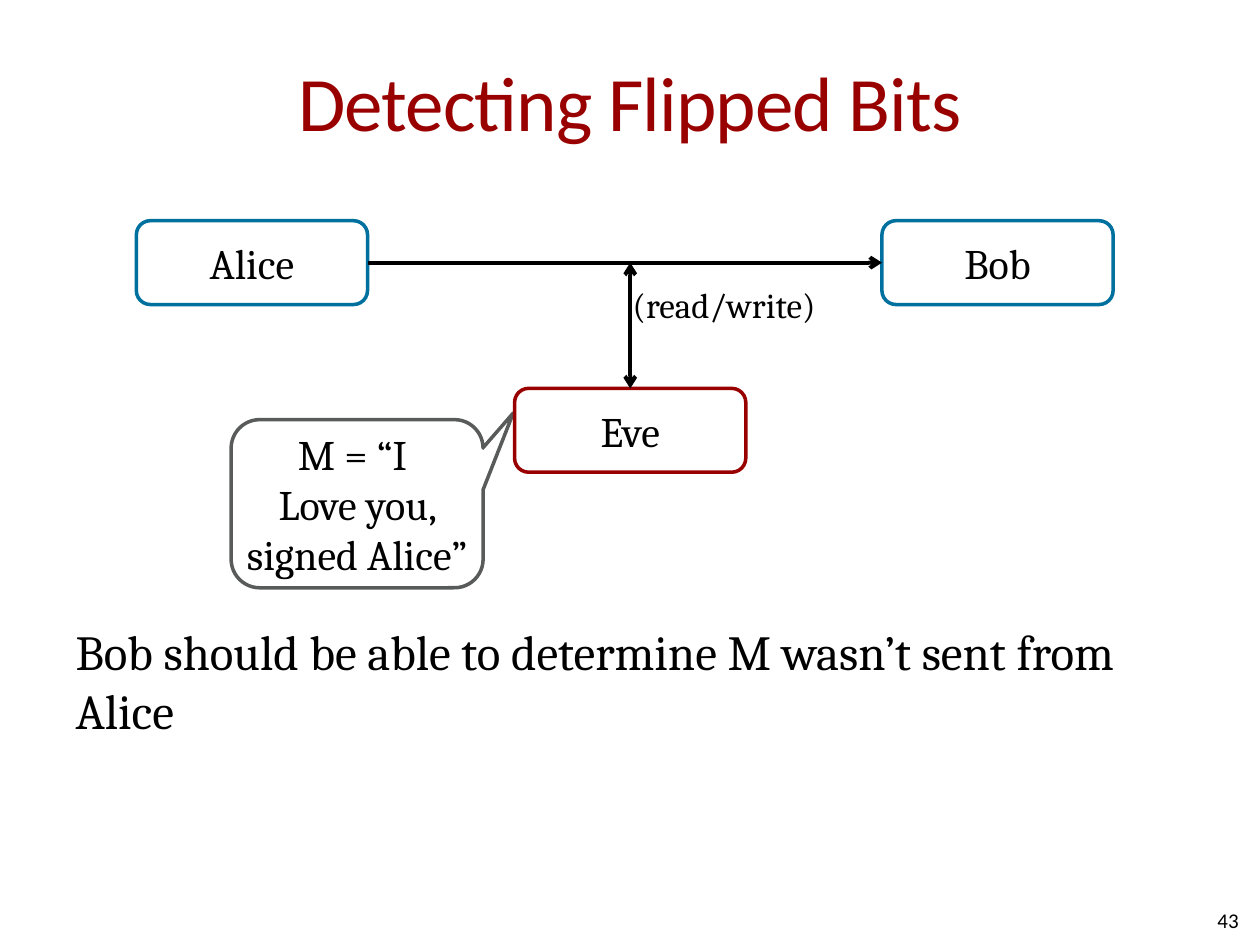
from dataclasses import dataclass

from lxml import etree
from pptx import Presentation
from pptx.dml.color import RGBColor
from pptx.enum.shapes import MSO_CONNECTOR, MSO_SHAPE
from pptx.enum.text import MSO_ANCHOR, MSO_AUTO_SIZE, PP_ALIGN
from pptx.oxml.ns import qn
from pptx.util import Cm, Pt

STRAIGHT = MSO_CONNECTOR.STRAIGHT
ROUNDED, CALLOUT = MSO_SHAPE.ROUNDED_RECTANGLE, MSO_SHAPE.ROUNDED_RECTANGULAR_CALLOUT
TOP, MIDDLE = MSO_ANCHOR.TOP, MSO_ANCHOR.MIDDLE
LEFT, CENTER, RIGHT = PP_ALIGN.LEFT, PP_ALIGN.CENTER, PP_ALIGN.RIGHT
SIDE_TOP, SIDE_LEFT, SIDE_RIGHT = 0, 1, 3


@dataclass(frozen=True)
class Theme:
    heading: str = "Calibri"
    text: str = "Cambria"
    black: RGBColor = RGBColor(0, 0, 0)
    white: RGBColor = RGBColor(255, 255, 255)
    red: RGBColor = RGBColor(0x99, 0, 0)
    blue: RGBColor = RGBColor(0, 0x70, 0x9E)
    gray: RGBColor = RGBColor(0x59, 0x5A, 0x5A)
    title_size: int = 44
    body_size: int = 28
    node_size: int = 24
    label_size: int = 20
    number_size: int = 12
    outline: float = 2
    arrow: float = 2.25


THEME = Theme()


def place(sp, box):
    sp.left, sp.top, sp.width, sp.height = (Cm(v) for v in box)


def set_margins(tf, x, y):
    tf.margin_left = tf.margin_right = Cm(x)
    tf.margin_top = tf.margin_bottom = Cm(y)


def add_run(p, text, size, font=THEME.text, color=THEME.black):
    r = p.add_run()
    r.text = text
    r.font.name, r.font.size = font, Pt(size)
    r.font.color.rgb = color
    return r


def write_lines(tf, lines, size, align, font=THEME.text):
    p = tf.paragraphs[0]
    p.alignment = align
    for i, line in enumerate(lines):
        if i:
            p.add_line_break()
        add_run(p, line, size, font)


def add_node(s, box, lines, color, kind=ROUNDED):
    sp = s.shapes.add_shape(kind, *(Cm(v) for v in box))
    sp.shadow.inherit = False
    sp.fill.solid()
    sp.fill.fore_color.rgb = THEME.white
    sp.line.color.rgb, sp.line.width = color, Pt(THEME.outline)
    tf = sp.text_frame
    set_margins(tf, 0, 0)
    tf.word_wrap, tf.vertical_anchor = True, MIDDLE
    write_lines(tf, lines, THEME.node_size, CENTER)
    return sp


def add_arrow(s, start, end, ends):
    cx = s.shapes.add_connector(STRAIGHT, *(Cm(v) for v in (*start, *end)))
    cx.line.color.rgb, cx.line.width = THEME.black, Pt(THEME.arrow)
    ln = cx.line._get_or_add_ln()
    for end_tag in ends:
        etree.SubElement(ln, qn(end_tag)).set("type", "arrow")
    etree.SubElement(cx._element.spPr, qn("a:effectLst"))
    return cx


def add_label(s, box, text, size, align=LEFT, font=THEME.text, anchor=TOP, wrap=True):
    tf = s.shapes.add_textbox(*(Cm(v) for v in box)).text_frame
    set_margins(tf, 0, 0)
    tf.word_wrap, tf.vertical_anchor = wrap, anchor
    if not wrap:
        tf.auto_size = MSO_AUTO_SIZE.SHAPE_TO_FIT_TEXT
    write_lines(tf, [text], size, align, font)


def fill_title(s, box, text):
    sp = s.shapes.title
    place(sp, box)
    tf = sp.text_frame
    set_margins(tf, 0, 0.13)
    tf.vertical_anchor = MIDDLE
    p = tf.paragraphs[0]
    p.alignment = CENTER
    r = add_run(p, text, THEME.title_size, THEME.heading, THEME.red)
    r.font._element.set("spc", "-50")


def fill_body(s, box, text):
    sp = s.placeholders[1]
    place(sp, box)
    p = sp.text_frame.paragraphs[0]
    pPr = p._p.get_or_add_pPr()
    pPr.set("marL", "0")
    pPr.set("indent", "0")
    etree.SubElement(pPr, qn("a:buNone"))
    add_run(p, text, THEME.body_size)


def add_channel(s, box):
    """Alice sends to Bob while Eve, below the line, reads and writes."""
    x, y, w, h = box
    node_w, node_h = 4.66, 1.69
    mid_x, mid_y = x + w / 2 + 0.11, y + node_h / 2
    eve_y = y + h - node_h - 2.33
    alice = add_node(s, (x, y, node_w, node_h), ["Alice"], THEME.blue)
    bob = add_node(s, (x + w - node_w, y, node_w, node_h), ["Bob"], THEME.blue)
    message = add_arrow(s, (x + node_w, mid_y), (x + w - node_w, mid_y), ["a:tailEnd"])
    message.begin_connect(alice, SIDE_RIGHT)
    message.end_connect(bob, SIDE_LEFT)

    callout = add_node(s, (x + 1.91, y + h - 3.39, 5.08, 3.39),
                       ["M = “I ", "Love you, signed Alice”"], THEME.gray, CALLOUT)
    for i, value in enumerate((0.62, -0.54, 0.17)):
        callout.adjustments[i] = value

    eve = add_node(s, (mid_x - node_w / 2, eve_y, node_w, node_h), ["Eve"], THEME.red)
    tap = add_arrow(s, (mid_x, eve_y), (mid_x, mid_y), ["a:headEnd", "a:tailEnd"])
    tap.begin_connect(eve, SIDE_TOP)
    add_label(s, (mid_x + 0.05, y + 1.27, 3.91, 0.86), "(read/write)",
              THEME.label_size, wrap=False)


def main():
    prs = Presentation()
    prs.slide_width, prs.slide_height = Cm(25.4), Cm(19.05)
    s = prs.slides.add_slide(prs.slide_layouts[1])
    fill_title(s, (1.27, 0.43, 22.86, 3.18), "Detecting Flipped Bits")
    fill_body(s, (1.27, 12.4, 22.86, 5.59),
              "Bob should be able to determine M wasn’t sent from Alice")
    add_label(s, (19.05, 18.03, 5.92, 1.02), "43", THEME.number_size,
              RIGHT, THEME.heading, MIDDLE)
    add_channel(s, (2.75, 4.45, 19.69, 7.4))
    prs.save("out.pptx")


if __name__ == "__main__":
    main()
